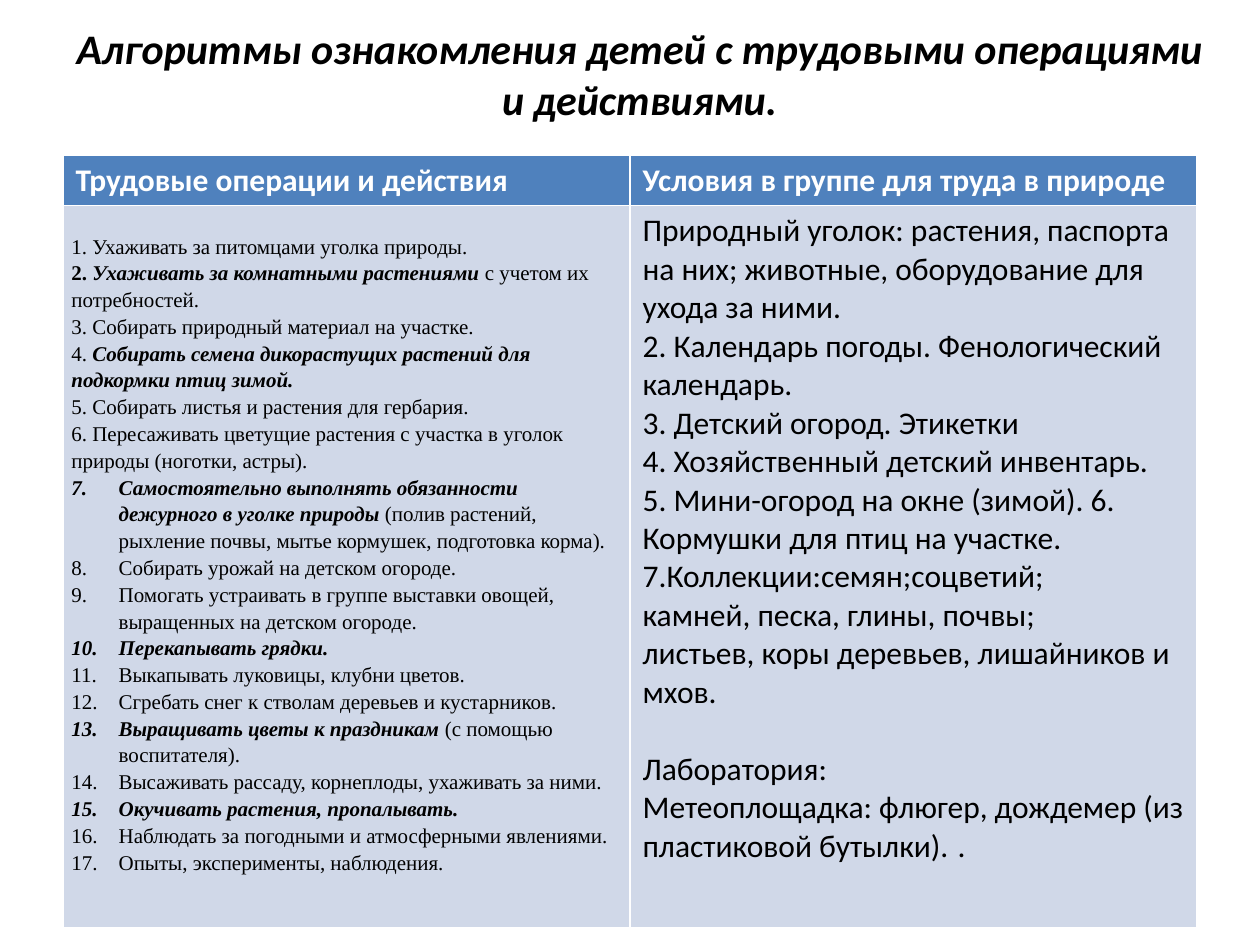
from lxml import etree
from pptx import Presentation
from pptx import util as u
from pptx.dml.color import RGBColor
from pptx.enum import text
from pptx.oxml import ns

COLORS = {"ink": "000000", "paper": "FFFFFF", "header": "4F81BD", "body": "D0D8E8"}
TITLE = "Алгоритмы ознакомления детей с трудовыми операциями и действиями."
HEADERS = ["Трудовые операции и действия", "Условия в группе для труда в природе"]

TYPED_TASKS = [
    [("1. Ухаживать за питомцами уголка природы.", "")],
    [("2. ", "b"), ("Ухаживать за комнатными растениями ", "bi"),
     ("с учетом их потребностей.", "")],
    [("3. Собирать природный материал на участке.", "")],
    [("4. ", ""), ("Собирать семена дикорастущих растений для подкормки птиц зимой.", "bi")],
    [("5. Собирать листья и растения для гербария.", "")],
    [("6. Пересаживать цветущие растения с участка в уголок природы (ноготки, астры).", "")],
]
NUMBERED_TASKS = [
    [("Самостоятельно выполнять обязанности дежурного в уголке природы ", "bi"),
     ("(полив растений, рыхление почвы, мытье кормушек, подготовка корма).", "")],
    [("Собирать урожай на детском огороде.", "")],
    [("Помогать устраивать в группе выставки овощей, выращенных на детском огороде.", "")],
    [("Перекапывать грядки.", "bi")],
    [("Выкапывать луковицы, клубни цветов.", "")],
    [("Сгребать снег к стволам деревьев и кустарников.", "")],
    [("Выращивать цветы к праздникам ", "bi"), ("(с помощью воспитателя).", "")],
    [("Высаживать рассаду, корнеплоды, ухаживать за ними.", "")],
    [("Окучивать растения, пропалывать.", "bi")],
    [("Наблюдать за погодными и атмосферными явлениями.", "")],
    [("Опыты, эксперименты, наблюдения.", "")],
]
CONDITIONS = [
    "Природный уголок: растения, паспорта на них; животные, оборудование для ухода за ними.",
    "2. Календарь погоды. Фенологический календарь.",
    "3. Детский огород. Этикетки",
    "4. Хозяйственный детский инвентарь.",
    "5. Мини-огород на окне (зимой). 6. Кормушки для птиц на участке.",
    "7.Коллекции:семян;соцветий;",
    "камней, песка, глины, почвы;",
    "листьев, коры деревьев, лишайников и мхов.",
]
LABORATORY = ["Лаборатория:", "Метеоплощадка: флюгер, дождемер (из пластиковой бутылки).\t."]
FIRST_NUMBER = len(TYPED_TASKS) + 1


def add_paragraph(frame, parts, size, font="Calibri", color="ink"):
    first = frame.paragraphs[0]
    para = frame.add_paragraph() if first.runs else first
    for words, style in parts:
        span = para.add_run()
        span.text = words
        span.font.name = font
        span.font.size = u.Pt(size)
        span.font.bold = "b" in style
        span.font.italic = "i" in style
        span.font.color.rgb = RGBColor.from_string(COLORS[color])
    return para


def number(para, start, indent):
    props = para._p.get_or_add_pPr()
    props.set("marL", str(u.Pt(indent)))
    props.set("indent", str(-u.Pt(indent)))
    etree.SubElement(props, ns.qn("a:buFont"), typeface="+mj-lt")
    etree.SubElement(props, ns.qn("a:buAutoNum"), type="arabicPeriod", startAt=str(start))


def fill_cell(cell, color):
    cell.fill.solid()
    cell.fill.fore_color.rgb = RGBColor.from_string(COLORS[color])
    return cell.text_frame


deck = Presentation()
deck.slide_width, deck.slide_height = u.Pt(720), u.Pt(540)
page = deck.slides.add_slide(deck.slide_layouts[6])

title = page.shapes.add_textbox(u.Pt(36), u.Pt(-8), u.Pt(659), u.Pt(130)).text_frame
title.word_wrap = True
title.margin_top = u.Pt(21)
add_paragraph(title, [(TITLE, "bi")], 24).alignment = text.PP_ALIGN.CENTER

table = page.shapes.add_table(2, 2, u.Pt(36), u.Pt(88.5), u.Pt(648), u.Pt(431)).table
table.horz_banding = False
table.rows[0].height, table.rows[1].height = u.Pt(29), u.Pt(402)

for column, heading in enumerate(HEADERS):
    frame = fill_cell(table.cell(0, column), "header")
    add_paragraph(frame, [(heading, "b")], 18, color="paper")

tasks = table.cell(1, 0)
tasks.vertical_anchor = text.MSO_ANCHOR.MIDDLE
tasks.margin_left = tasks.margin_right = u.Pt(4.8)
tasks.margin_top, tasks.margin_bottom = u.Pt(0), u.Pt(15.5)
frame = fill_cell(tasks, "body")
for index, parts in enumerate(TYPED_TASKS + NUMBERED_TASKS, 1):
    para = add_paragraph(frame, parts, 12, "Times New Roman")
    para.line_spacing = 1.15
    if index >= FIRST_NUMBER:
        number(para, FIRST_NUMBER, 27)

frame = fill_cell(table.cell(1, 1), "body")
for line in CONDITIONS + LABORATORY:
    para = add_paragraph(frame, [(line, "")], 18)
    if line == LABORATORY[0]:
        para.space_before = u.Pt(22)

deck.save("out.pptx")
